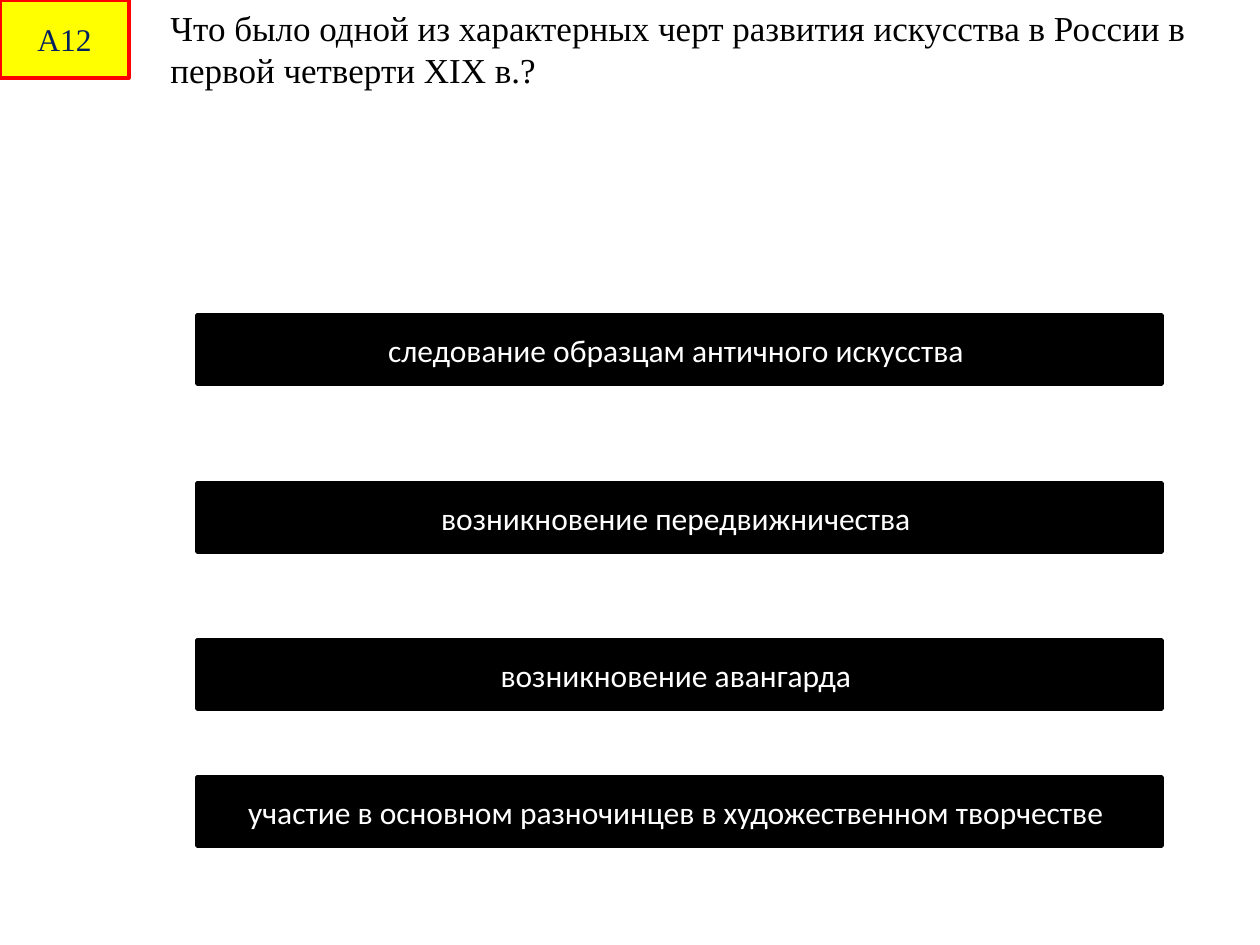
from pptx import Presentation, util as u
from pptx.dml.color import RGBColor
from pptx.enum import shapes, text

EMU_PER_PX = 914400 / 126
ANSWERS = [
    (315, "ACTION_BUTTON_FORWARD_OR_NEXT", "следование образцам античного искусства "),
    (483, "ACTION_BUTTON_BACK_OR_PREVIOUS", "возникновение передвижничества "),
    (640, "ACTION_BUTTON_BACK_OR_PREVIOUS", "возникновение авангарда "),
    (777, "ACTION_BUTTON_BACK_OR_PREVIOUS", "участие в основном разночинцев в художественном творчестве "),
]


def px(*lengths):
    return [u.Emu(round(length * EMU_PER_PX)) for length in lengths]


def color(value):
    return RGBColor.from_string(value)


class QuizSlide:
    """Holds the quiz style and the current slide."""

    serif = "Times New Roman"
    sans = "Calibri"
    black = "000000"
    white = "FFFFFF"

    def __init__(self, deck):
        self.page = deck.slides.add_slide(deck.slide_layouts[6])

    def label(self, box, words, font, size, ink, align):
        frame = box.text_frame
        frame.word_wrap = True
        frame.text = words
        para = frame.paragraphs[0]
        para.alignment = align
        span = para.runs[0]
        span.font.name = font
        span.font.size = u.Pt(size)
        span.font.color.rgb = color(ink)

    def block(self, kind, place, words, fill, line, font, ink):
        box = self.page.shapes.add_shape(kind, *px(*place))
        box.shadow.inherit = False
        box.fill.solid()
        box.fill.fore_color.rgb = color(fill)
        box.line.color.rgb = color(line)
        box.line.width = u.Pt(2)
        box.text_frame.vertical_anchor = text.MSO_ANCHOR.MIDDLE
        self.label(box, words, font, 18, ink, text.PP_ALIGN.CENTER)

    def number(self, words):
        self.block(shapes.MSO_SHAPE.RECTANGLE, (0, 0, 129, 78), words,
                   "FFFF00", "FF0000", self.serif, "002060")

    def question(self, words):
        box = self.page.shapes.add_textbox(*px(158, 0, 1102, 97))
        self.label(box, words, self.serif, 20, self.black, text.PP_ALIGN.LEFT)
        box.text_frame.auto_size = text.MSO_AUTO_SIZE.SHAPE_TO_FIT_TEXT

    def answer(self, top, button, words):
        self.block(shapes.MSO_SHAPE[button], (197, top, 965, 69), words,
                   self.black, self.black, self.sans, self.white)


def main():
    deck = Presentation()
    deck.slide_width, deck.slide_height = px(1260, 945)
    quiz = QuizSlide(deck)
    quiz.number("А12")
    quiz.question("Что было одной из характерных черт развития искусства "
                  "в России в первой четверти XIX в.?")
    for top, button, words in ANSWERS:
        quiz.answer(top, button, words)
    deck.save("out.pptx")


if __name__ == "__main__":
    main()
